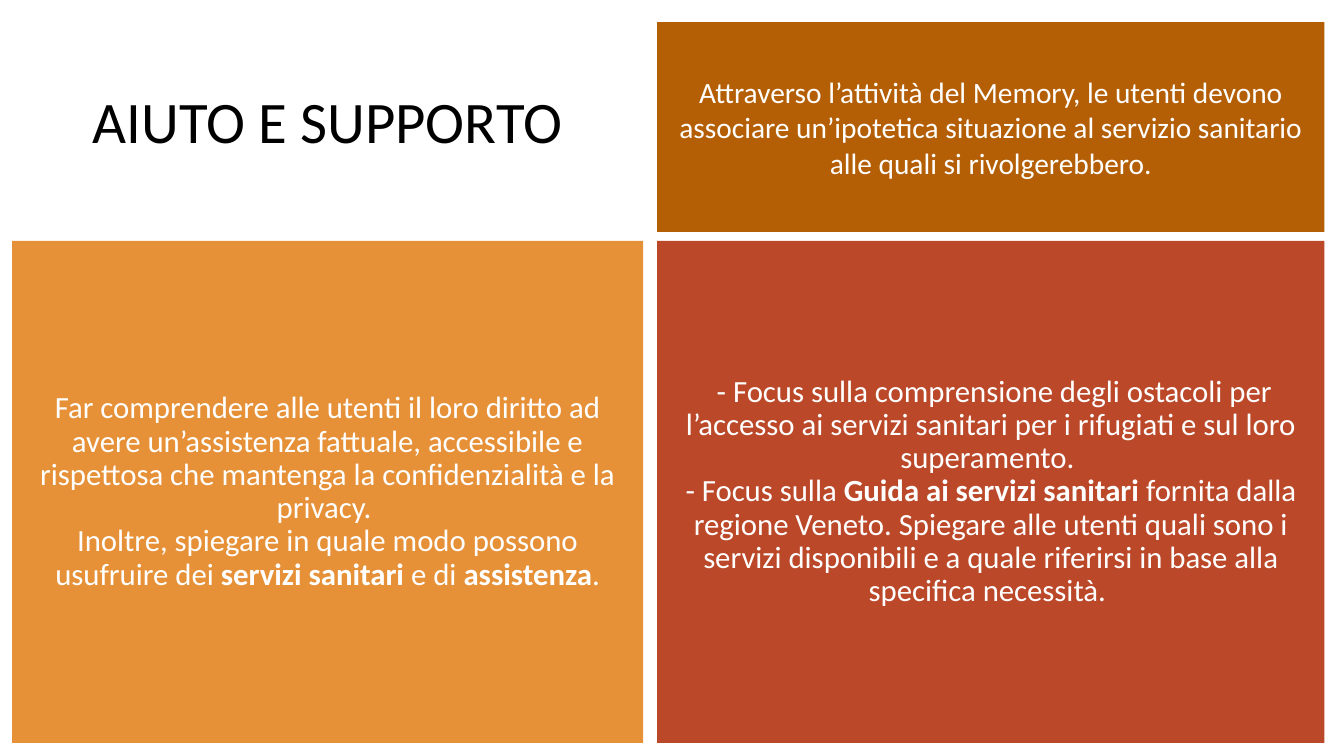
from lxml import etree
from pptx import Presentation
from pptx.dml.color import RGBColor
from pptx.enum.shapes import MSO_SHAPE
from pptx.enum.text import MSO_ANCHOR, PP_ALIGN
from pptx.oxml.ns import qn
from pptx.util import Pt

RECT = MSO_SHAPE.RECTANGLE
MIDDLE = MSO_ANCHOR.MIDDLE
CENTER = PP_ALIGN.CENTER

FONT = "Calibri"
COLORS = {
    "black": "000000",
    "white": "FFFFFF",
    "brown": "B45F06",
    "orange": "E69138",
    "red": "B43512",
}

LEFT, TOP = 8.64, 15.84
COL_WIDTHS = (450.72, 476.64)
ROW_HEIGHTS = (149.76, 358.56)
COL_GAP, ROW_GAP = 10.08, 6.48

TITLE = [[("AIUTO E SUPPORTO", False)]]
ACTIVITY = [[(
    "Attraverso l’attività del Memory, le utenti devono associare un’ipotetica "
    "situazione al servizio sanitario alle quali si rivolgerebbero.", False)]]
RIGHTS = [
    [("Far comprendere alle utenti il loro diritto ad avere un’assistenza fattuale, "
      "accessibile e rispettosa che mantenga la confidenzialità e la privacy. ", False)],
    [("Inoltre, spiegare in quale modo possono usufruire dei ", False),
     ("servizi sanitari", True), (" e di ", False), ("assistenza", True), (".", False)],
]
FOCUS = [
    [(" - Focus sulla comprensione degli ostacoli per l’accesso ai servizi sanitari "
      "per i rifugiati e sul loro superamento. ", False)],
    [("- Focus sulla ", False), ("Guida ai servizi sanitari", True),
     (" fornita dalla regione Veneto. Spiegare alle utenti quali sono i servizi "
      "disponibili e a quale riferirsi in base alla specifica necessità. ", False)],
]


def rgb(name):
    return RGBColor.from_string(COLORS[name])


def cell_box(col, row):
    x = LEFT + col * (COL_WIDTHS[0] + COL_GAP)
    y = TOP + row * (ROW_HEIGHTS[0] + ROW_GAP)
    return [Pt(v) for v in (x, y, COL_WIDTHS[col], ROW_HEIGHTS[row])]


def write_text(sp, paragraphs, size, color, spacing, inset):
    tf = sp.text_frame
    tf.word_wrap = True
    tf.vertical_anchor = MIDDLE
    tf.margin_left = tf.margin_right = Pt(7.2)
    tf.margin_top = tf.margin_bottom = Pt(inset)
    for i, runs in enumerate(paragraphs):
        p = tf.add_paragraph() if i else tf.paragraphs[0]
        p.alignment = CENTER
        p.line_spacing = spacing
        p.font.name = FONT
        p.font.size = Pt(size)
        p.font.color.rgb = rgb(color)
        for text, bold in runs:
            r = p.add_run()
            r.text = text
            if bold:
                r.font.bold = True


def add_title(s, box):
    sp = s.shapes.add_textbox(*box)
    write_text(sp, TITLE, 42, "black", 0.8, 3.6)


def add_panel(s, box, fill, paragraphs, size, spacing, opacity=100):
    sp = s.shapes.add_shape(RECT, *box)
    sp.shadow.inherit = False
    sp.line.fill.background()
    sp.fill.solid()
    sp.fill.fore_color.rgb = rgb(fill)
    if opacity < 100:
        clr = sp.fill._xPr.find(qn("a:solidFill")).find(qn("a:srgbClr"))
        etree.SubElement(clr, qn("a:alpha"), val=str(opacity * 1000))
    write_text(sp, paragraphs, size, "white", spacing, 7.2)


def main():
    prs = Presentation()
    prs.slide_width, prs.slide_height = Pt(960), Pt(540)
    s = prs.slides.add_slide(prs.slide_layouts[6])
    add_title(s, cell_box(0, 0))
    add_panel(s, cell_box(1, 0), "brown", ACTIVITY, 21, 1.0)
    add_panel(s, cell_box(0, 1), "orange", RIGHTS, 22, 0.9)
    add_panel(s, cell_box(1, 1), "red", FOCUS, 22, 0.9, opacity=90)
    prs.save("out.pptx")


if __name__ == "__main__":
    main()
